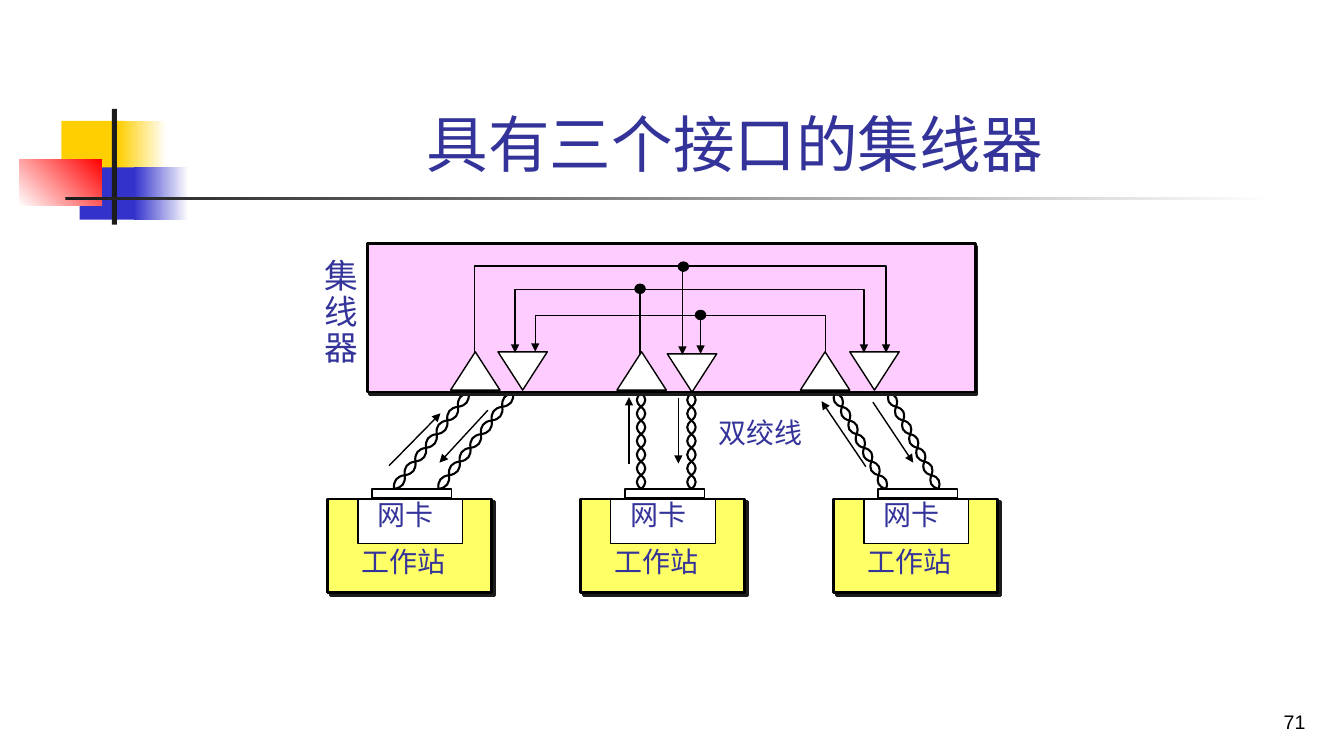
"""Build a slide showing a hub with three ports linked to three workstations."""
import math
from dataclasses import dataclass

import lxml.etree
import pptx
import pptx.dml.color
import pptx.enum.shapes
import pptx.enum.text
import pptx.oxml.ns
import pptx.shapes.base
import pptx.slide
import pptx.text.text
import pptx.util

CELL = pptx.util.Inches(0.1)
COLUMNS, ROWS = 133.33, 75
COLORS = {
    "black": "000000", "white": "FFFFFF", "ink": "1C1C1C", "text": "333399",
    "gold": "FFCF01", "blue": "3333CC", "red": "FF0000", "hub": "FFCCFF", "station": "FFFF66",
}
KINDS = pptx.enum.shapes.MSO_SHAPE
ALIGN = pptx.enum.text.PP_ALIGN
ANCHOR = pptx.enum.text.MSO_ANCHOR
Point = tuple[float, float]
TWISTS = 7
STRAND_REACH = 0.56


@dataclass(frozen=True)
class Block:
    column: float
    row: float
    width: float
    height: float
    fill: str
    fade: str = ""
    angle: float = 0
    outline: float = 0
    kind: int = KINDS.RECTANGLE
    turn: float = 0
    shadow: tuple[float, float] = (0, 0)


@dataclass(frozen=True)
class Label:
    column: float
    row: float
    width: float
    height: float
    lines: tuple[str, ...]
    size: float = 20
    font: str = "Times New Roman"
    color: str = "text"
    spacing: float = 1.0
    align: int = ALIGN.LEFT
    anchor: int = ANCHOR.TOP
    wrap: bool = False


@dataclass(frozen=True)
class Wire:
    points: tuple[Point, ...]


DECORATION = (
    Block(6.1, 12, 6.4, 5.2, "gold"),
    Block(11.7, 12, 4.8, 5.2, "gold", "white"),
    Block(7.9, 16.6, 6.2, 5.2, "blue"),
    Block(13.3, 16.6, 5.4, 5.2, "blue", "white"),
    Block(1.9, 15.8, 8.2, 4.6, "white", "red", 45),
    Block(11.1, 10.8, 0.5, 11.5, "ink"),
    Block(6.5, 19.5, 120, 0.35, "ink", "white"),
)
TITLE = Label(16.8, 2.3, 113.6, 16, ("具有三个接口的集线器 ",), 44, "Arial",
              align=ALIGN.CENTER, anchor=ANCHOR.BOTTOM, wrap=True)
LABELS = (
    Label(31.2, 25.2, 5.4, 11.9, ("集", "线", "器"), 24, spacing=0.9),
    Label(70.3, 40.7, 10.4, 4.3, ("双绞线",)),
    Label(102.7, 68.3, 27.8, 5, ("71",), 14, "Arial", "black",
          align=ALIGN.RIGHT, anchor=ANCHOR.BOTTOM, wrap=True),
)
HUB = Block(36.5, 24.2, 60.3, 14.7, "hub", outline=2, shadow=(2.2, 63))
SENDERS = ((44.7, 34.9), (61.2, 34.9), (79.4, 34.9))
RECEIVERS = ((49.4, 34.9), (66.2, 35.1), (84.3, 34.9))
JUNCTIONS = ((63.5, 28.65), (67.8, 26.45), (69.5, 31.25))
CABLES = (
    ((39.1, 48.5), (46.5, 39)), ((43.5, 48.5), (50.9, 39)),
    ((63.6, 48.5), (63.6, 39)), ((68.6, 48.5), (68.6, 39)),
    ((87.9, 48.5), (82.8, 39)), ((93.1, 48.5), (88.2, 39)),
)
HUB_WIRES = (
    Wire(((81.9, 34.9), (81.9, 31.3), (53.1, 31.3), (53.1, 34.9))),
    Wire(((63.5, 35.1), (63.5, 28.7), (85.7, 28.7), (85.7, 35))),
    Wire(((63.6, 28.7), (51.1, 28.7), (51.1, 35))),
    Wire(((47.1, 35.1), (47.1, 26.4), (87.9, 26.4), (87.9, 35))),
)
ARROWS = (
    Wire(((69.5, 31.4), (69.5, 35.1))), Wire(((67.7, 26.6), (67.7, 35.2))),
    Wire(((62.4, 46), (62.4, 39.4))), Wire(((67.3, 39.5), (67.3, 46))),
    Wire(((38.6, 46.2), (43.7, 41))), Wire(((48.4, 40.7), (43.6, 45.9))),
    Wire(((85.9, 46.3), (81.5, 39.8))), Wire(((86.6, 39.9), (90.6, 45.9))),
)


def grid(count: float) -> pptx.util.Emu:
    return pptx.util.Emu(round(count * CELL))


def rgb(name: str) -> pptx.dml.color.RGBColor:
    return pptx.dml.color.RGBColor.from_string(COLORS[name])


def add_xml(parent: lxml.etree._Element, tag: str, **values: str) -> lxml.etree._Element:
    return lxml.etree.SubElement(parent, pptx.oxml.ns.qn(tag), **values)


def draw_block(slide: pptx.slide.Slide, block: Block) -> None:
    box = map(grid, (block.column, block.row, block.width, block.height))
    shape = slide.shapes.add_shape(block.kind, *box)
    shape.rotation = block.turn
    shape.shadow.inherit = False
    if block.fade:
        shape.fill.gradient()
        shape.fill.gradient_angle = block.angle
        for stop, name in zip(shape.fill.gradient_stops, (block.fill, block.fade)):
            stop.color.rgb = rgb(name)
    else:
        shape.fill.solid()
        shape.fill.fore_color.rgb = rgb(block.fill)
    if block.outline:
        shape.line.color.rgb = rgb("black")
        shape.line.width = pptx.util.Pt(block.outline)
    else:
        shape.line.fill.background()
    distance, direction = block.shadow
    if distance:
        effects = shape._element.spPr.find(pptx.oxml.ns.qn("a:effectLst"))
        cast = add_xml(effects, "a:outerShdw", dist=str(int(pptx.util.Pt(distance))),
                       dir=str(direction * 60000), algn="ctr", rotWithShape="0")
        add_xml(cast, "a:srgbClr", val=COLORS["ink"])


def fill_text(frame: pptx.text.text.TextFrame, label: Label) -> None:
    frame_format = {"word_wrap": label.wrap, "vertical_anchor": label.anchor,
                    "auto_size": pptx.enum.text.MSO_AUTO_SIZE.NONE}
    for name, value in frame_format.items():
        setattr(frame, name, value)
    frame.text = "\n".join(label.lines)
    font_format = {"name": label.font, "size": pptx.util.Pt(label.size), "bold": False}
    for paragraph in frame.paragraphs:
        paragraph.alignment = label.align
        paragraph.line_spacing = label.spacing
        font = paragraph.runs[0].font
        for name, value in font_format.items():
            setattr(font, name, value)
        font.color.rgb = rgb(label.color)


def draw_label(slide: pptx.slide.Slide, label: Label) -> None:
    box = map(grid, (label.column, label.row, label.width, label.height))
    fill_text(slide.shapes.add_textbox(*box).text_frame, label)


def place_title(slide: pptx.slide.Slide) -> None:
    title = slide.shapes.title
    place = {"left": TITLE.column, "top": TITLE.row, "width": TITLE.width, "height": TITLE.height}
    for name, count in place.items():
        setattr(title, name, grid(count))
    fill_text(title.text_frame, TITLE)


def draw_wire(slide: pptx.slide.Slide, wire: Wire, width: float = 1,
              arrow: bool = True) -> pptx.shapes.base.BaseShape:
    points = [(grid(column), grid(row)) for column, row in wire.points]
    if len(points) == 2:
        straight = pptx.enum.shapes.MSO_CONNECTOR.STRAIGHT
        shape = slide.shapes.add_connector(straight, *points[0], *points[1])
    else:
        builder = slide.shapes.build_freeform(*points[0])
        builder.add_line_segments(points[1:], close=False)
        shape = builder.convert_to_shape()
        shape.fill.background()
    shape.line.color.rgb = rgb("black")
    shape.line.width = pptx.util.Pt(width)
    if arrow:
        add_xml(shape.line._get_or_add_ln(), "a:tailEnd", type="triangle")
    add_xml(shape._element.spPr, "a:effectLst")
    return shape


def curve_outline(shape: pptx.shapes.base.BaseShape) -> None:
    outline = next(shape._element.iter(pptx.oxml.ns.qn("a:path")))
    for index, segment in enumerate(outline.findall(pptx.oxml.ns.qn("a:lnTo"))):
        if index % 3 == 0:
            curve = add_xml(outline, "a:cubicBezTo")
        curve.append(segment[0])
        outline.remove(segment)


def draw_cable(slide: pptx.slide.Slide, start: Point, end: Point) -> None:
    across, down = end[0] - start[0], end[1] - start[1]
    length = math.hypot(across, down)
    for side in (-STRAND_REACH, STRAND_REACH):
        points = []
        for step in range(3 * TWISTS + 1):
            share = step / (3 * TWISTS)
            sway = side * (-1) ** (step // 3) / length if step % 3 else 0
            points.append((start[0] + across * share - down * sway,
                           start[1] + down * share + across * sway))
        curve_outline(draw_wire(slide, Wire(tuple(points)), 1.5, arrow=False))


def draw_station(slide: pptx.slide.Slide, left: float) -> None:
    draw_block(slide, Block(left, 49.5, 16.3, 9.3, "station", outline=2, shadow=(2.8, 45)))
    draw_block(slide, Block(left + 3, 49.5, 10.4, 4.4, "white", outline=1))
    draw_block(slide, Block(left + 4.4, 48.5, 7.9, 0.9, "white", outline=1))
    draw_label(slide, Label(left + 4, 48.9, 7.6, 4.3, ("网卡",)))
    draw_label(slide, Label(left + 2.4, 53.5, 10.4, 4.3, ("工作站",)))


def main() -> None:
    presentation = pptx.Presentation()
    presentation.slide_width, presentation.slide_height = grid(COLUMNS), grid(ROWS)
    slide = presentation.slides.add_slide(presentation.slide_layouts[5])
    place_title(slide)
    for block in DECORATION:
        draw_block(slide, block)
    for start, end in CABLES:
        draw_cable(slide, start, end)
    draw_block(slide, HUB)
    for places, turn in ((SENDERS, 0), (RECEIVERS, 180)):
        for column, row in places:
            draw_block(slide, Block(column, row, 4.9, 3.8, "white", outline=1,
                                    kind=KINDS.ISOSCELES_TRIANGLE, turn=turn))
    for wire in HUB_WIRES + ARROWS:
        draw_wire(slide, wire)
    for column, row in JUNCTIONS:
        draw_block(slide, Block(column - 0.5, row - 0.45, 1, 0.9, "black", outline=1, kind=KINDS.OVAL))
    for index in range(3):
        draw_station(slide, 32.5 + 25.1 * index)
    for label in LABELS:
        draw_label(slide, label)
    presentation.save("out.pptx")


if __name__ == "__main__":
    main()
